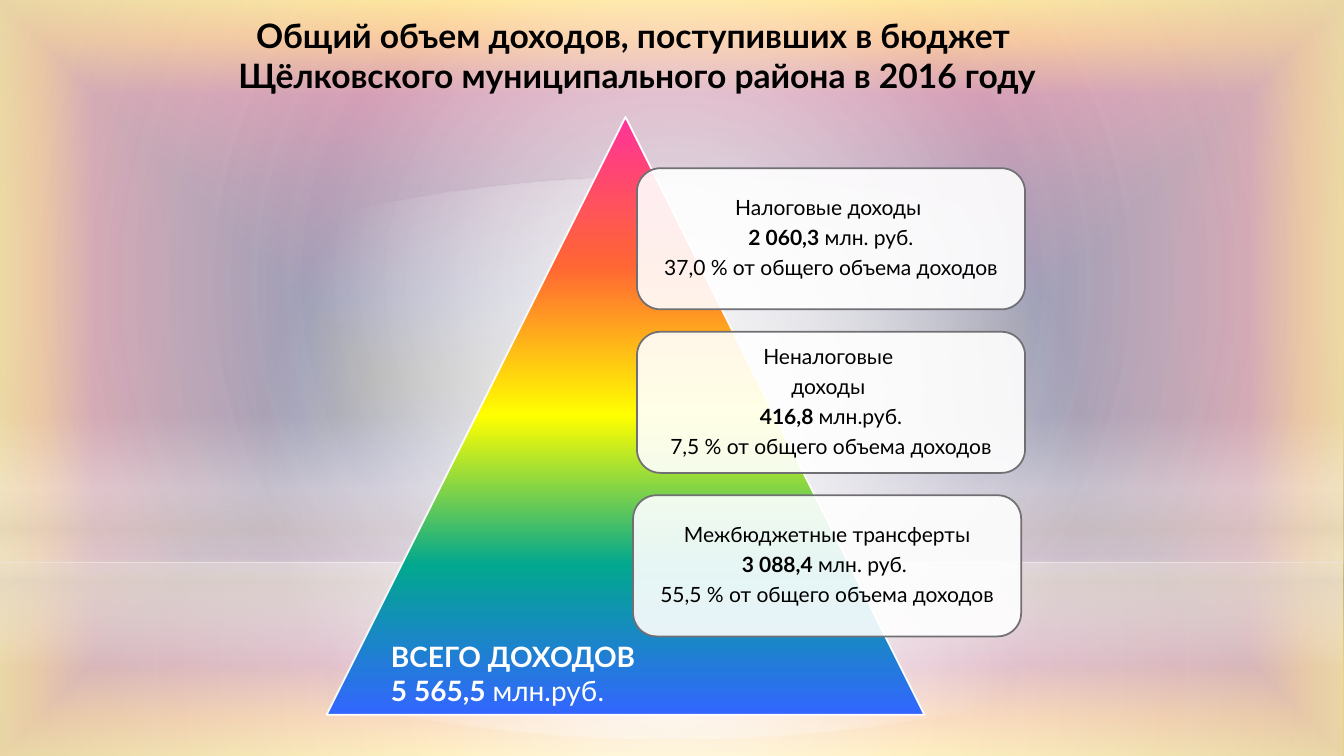
from dataclasses import dataclass

from lxml.etree import SubElement
from pptx import Presentation
from pptx.dml.color import RGBColor
from pptx.enum.shapes import MSO_SHAPE
from pptx.enum.text import MSO_ANCHOR, PP_ALIGN
from pptx.oxml.ns import qn
from pptx.util import Pt


@dataclass(frozen=True)
class Theme:
    """Fonts, type sizes, colours and gradients of the slide."""

    font: str = "Lato"
    second_font: str = "Calibri"
    title_size: float = 24
    total_size: float = 20
    card_size: float = 15
    line_width: float = 1.25
    dark: str = "000000"
    light: str = "FFFFFF"
    card_line: str = "6F6F74"
    card_opacity: int = 90
    backdrop: tuple = ((0, "000000"), (20, "000040"), (50, "400040"),
                       (75, "8F0040"), (90, "F27300"), (100, "FFBF00"))
    floor: tuple = ((0, "FFFFFF", 91), (37, "FFFFFF", 76), (100, "E3DCCF", 79))
    wall: tuple = ((0, "FFFFFF", 89), (48, "FFFFFF", 62), (100, "E3DCCF", 79))
    horizon: tuple = ((0, "FFFFFF", 0), (29, "FFFFFF", 30), (45, "E3DCCF", 40),
                      (55, "FFFFFF", 26), (65, "E3DCCF", 60), (100, "FFFFFF", 0))
    glow: tuple = ((0, "FFFFFF"), (56, "FFFFFF", 0))
    rainbow: tuple = ((0, "FF3399"), (25, "FF6633"), (50, "FFFF00"),
                      (75, "01A78F"), (100, "3366FF"))


class SlideBuilder:
    """Draws styled elements on one slide."""

    def __init__(self, slide, theme):
        """Keep the slide and its theme."""
        self.slide = slide
        self.theme = theme

    def set_opacity(self, color, percent):
        """Set the opacity of a colour element."""
        SubElement(color, qn("a:alpha")).set("val", str(percent * 1000))

    def apply_gradient(self, solid, stops, outline=None):
        """Turn a solid fill into a vertical gradient or one following an outline."""
        gradient = solid.makeelement(qn("a:gradFill"), {"rotWithShape": "1"})
        stop_list = SubElement(gradient, qn("a:gsLst"))
        for position, color, *opacity in stops:
            stop = SubElement(stop_list, qn("a:gs"), pos=str(position * 1000))
            color_element = SubElement(stop, qn("a:srgbClr"), val=color)
            for percent in opacity:
                self.set_opacity(color_element, percent)
        if outline:
            focus = SubElement(gradient, qn("a:path"), {"path": outline})
            sides = dict.fromkeys("ltrb", "50000")
            SubElement(focus, qn("a:fillToRect"), sides)
        else:
            SubElement(gradient, qn("a:lin"), ang="5400000", scaled="0")
        solid.getparent().replace(solid, gradient)

    def background(self, stops):
        """Fill the slide background with a gradient from its edges inward."""
        self.slide.background.fill.solid()
        self.slide.background.fill.fore_color.rgb = RGBColor.from_string(self.theme.dark)
        solid = self.slide.element.xpath("./p:cSld/p:bg/p:bgPr/a:solidFill")[0]
        self.apply_gradient(solid, stops, "shape")

    def shape(self, kind, box, line=None):
        """Add a light shape without shadow, with an optional outline."""
        shape = self.slide.shapes.add_shape(kind, *map(Pt, box))
        shape.shadow.inherit = False
        shape.fill.solid()
        shape.fill.fore_color.rgb = RGBColor.from_string(self.theme.light)
        if line:
            shape.line.color.rgb = RGBColor.from_string(line)
            shape.line.width = Pt(self.theme.line_width)
        else:
            shape.line.fill.background()
        return shape

    def gradient_shape(self, kind, box, stops, outline=None, line=None):
        """Add a shape with a gradient fill."""
        shape = self.shape(kind, box, line)
        solid = shape.element.xpath("./p:spPr/a:solidFill")[0]
        self.apply_gradient(solid, stops, outline)

    def add_lines(self, frame, lines, size, color, align, spacing=None, after=None):
        """Add lines of (text, bold, font) runs to a text frame."""
        frame.word_wrap = True
        for index, runs in enumerate(lines):
            paragraph = frame.add_paragraph() if index else frame.paragraphs[0]
            paragraph.alignment = align
            if spacing:
                paragraph.line_spacing = spacing
                paragraph.space_after = Pt(after)
            for text, bold, *font in runs:
                run = paragraph.add_run()
                run.text = text
                run.font.name = font[0] if font else self.theme.font
                run.font.size = Pt(size)
                run.font.bold = bold
                run.font.color.rgb = RGBColor.from_string(color)

    def text(self, box, lines, size, color, align):
        """Add a text box."""
        frame = self.slide.shapes.add_textbox(*map(Pt, box)).text_frame
        self.add_lines(frame, lines, size, color, align)

    def card(self, box, lines):
        """Add a translucent rounded card with centred text."""
        shape = self.shape(MSO_SHAPE.ROUNDED_RECTANGLE, box, self.theme.card_line)
        color = shape.element.xpath("./p:spPr/a:solidFill/a:srgbClr")[0]
        self.set_opacity(color, self.theme.card_opacity)
        frame = shape.text_frame
        frame.vertical_anchor = MSO_ANCHOR.MIDDLE
        frame.margin_left = frame.margin_right = Pt(4.5)
        frame.margin_top = frame.margin_bottom = Pt(4.5)
        size = self.theme.card_size
        self.add_lines(frame, lines, size, self.theme.dark, PP_ALIGN.CENTER,
                       0.9, size * 0.35)


def main():
    """Build and save the income slide."""
    width, height, horizon = 960, 540, 401.8
    presentation = Presentation()
    presentation.slide_width, presentation.slide_height = Pt(width), Pt(height)
    theme = Theme()
    slide = presentation.slides.add_slide(presentation.slide_layouts[6])
    builder = SlideBuilder(slide, theme)

    builder.background(theme.backdrop)
    rectangle = MSO_SHAPE.RECTANGLE
    builder.gradient_shape(rectangle, (0, horizon, width, height - horizon),
                           theme.floor, "circle")
    builder.gradient_shape(rectangle, (0, 0, width, horizon), theme.wall, "circle")
    builder.gradient_shape(rectangle, (0, 296.6, width, 180), theme.horizon)
    builder.gradient_shape(MSO_SHAPE.OVAL, (0, 126, width, horizon),
                           theme.glow, "circle")

    builder.text((82.8, 7.2, 744.5, 97.9), [
        [("Общий объем доходов, поступивших в бюджет ", True)],
        [("Щёлковского муниципального района в 2016 году", True)],
    ], theme.title_size, theme.dark, PP_ALIGN.CENTER)

    builder.gradient_shape(MSO_SHAPE.ISOSCELES_TRIANGLE, (233.3, 83.5, 427, 427),
                           theme.rainbow, line=theme.light)

    cards = (
        (455, ["Налоговые доходы "], "2 060,3", " млн. руб.", "37,0"),
        (455, ["Неналоговые ", "доходы "], "416,8 ", "млн.руб.", "7,5"),
        (452.2, ["Межбюджетные трансферты"], "3 088,4", " млн. руб. ", "55,5"),
    )
    for index, (left, names, amount, unit, share) in enumerate(cards):
        lines = [[(name, False)] for name in names]
        lines.append([(amount, True), (unit, False)])
        lines.append([(f"{share} % от общего объема доходов", False)])
        builder.card((left, 120.2 + 116.8 * index, 277.2, 100.8), lines)

    builder.text((272.2, 453.6, 295.2, 55.4), [
        [("ВСЕГО ДОХОДОВ", True)],
        [("5 565,5 ", True), ("млн.руб", False), (".", False, theme.second_font)],
    ], theme.total_size, theme.light, PP_ALIGN.LEFT)

    presentation.save("out.pptx")


if __name__ == "__main__":
    main()
